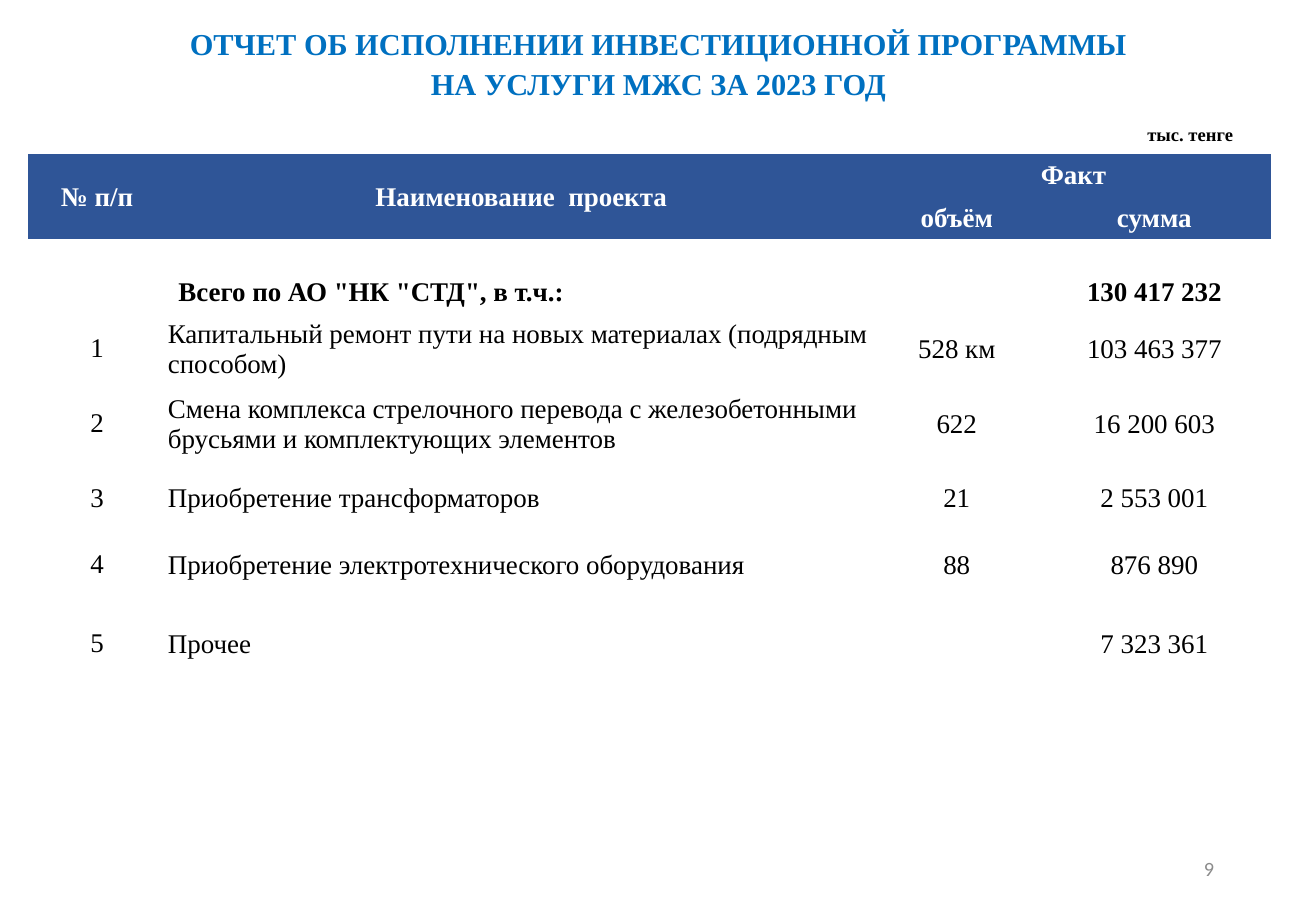
import dataclasses

import pptx
import pptx.dml.color
import pptx.enum.text
import pptx.oxml.ns
import pptx.util

Cm = pptx.util.Cm
Align = pptx.enum.text.PP_ALIGN
Anchor = pptx.enum.text.MSO_ANCHOR
AutoSize = pptx.enum.text.MSO_AUTO_SIZE


@dataclasses.dataclass(frozen=True)
class Theme:
    serif: str = "Times New Roman"
    sans: str = "Calibri"
    title_color: str = "0070C0"
    header_fill: str = "2F5597"
    white: str = "FFFFFF"
    black: str = "000000"
    gray: str = "8C8C8C"
    title_size: int = 18
    table_size: int = 16
    number_size: int = 12
    unit_size: int = 11
    plain_table: str = "{2D5ABB26-0587-4C30-8999-92F81FD0307C}"


def apply_format(target, values):
    for name, value in values.items():
        setattr(target, name, value)


def margins(left, top, right, bottom):
    return {
        "margin_left": Cm(left),
        "margin_top": Cm(top),
        "margin_right": Cm(right),
        "margin_bottom": Cm(bottom),
    }


class ReportSlide:
    def __init__(self, presentation, theme):
        self.theme = theme
        self.slide = presentation.slides.add_slide(presentation.slide_layouts[6])

    def add_line(self, paragraph, text, size, color, bold=False, font=None, **layout):
        apply_format(paragraph, layout)
        run = paragraph.add_run()
        run.text = text
        apply_format(run.font, {
            "name": font or self.theme.serif,
            "size": pptx.util.Pt(size),
            "bold": bold,
        })
        run.font.color.rgb = pptx.dml.color.RGBColor.from_string(color)

    def text(self, box, lines, auto_size=AutoSize.NONE, **style):
        frame = self.slide.shapes.add_textbox(*map(Cm, box)).text_frame
        apply_format(frame, {
            "word_wrap": True,
            "vertical_anchor": Anchor.MIDDLE,
            "auto_size": auto_size,
        })
        for index, line in enumerate(lines):
            paragraph = frame.add_paragraph() if index else frame.paragraphs[0]
            self.add_line(paragraph, line, **style)

    def table(self, left, top, widths, heights):
        table = self.slide.shapes.add_table(
            len(heights), len(widths), Cm(left), Cm(top),
            Cm(sum(widths)), Cm(sum(heights)),
        ).table
        apply_format(table, {"first_row": False, "horz_banding": False})
        style_id = table._tbl.tblPr.find(pptx.oxml.ns.qn("a:tableStyleId"))
        style_id.text = self.theme.plain_table
        for column, width in zip(table.columns, widths):
            column.width = Cm(width)
        for row, height in zip(table.rows, heights):
            row.height = Cm(height)
        return table

    def cell(self, cell, text, fill, color, inset, alignment, bold):
        cell.fill.solid()
        cell.fill.fore_color.rgb = pptx.dml.color.RGBColor.from_string(fill)
        apply_format(cell, {"vertical_anchor": Anchor.MIDDLE, **inset})
        if text:
            self.add_line(cell.text_frame.paragraphs[0], text, self.theme.table_size,
                          color, bold, alignment=alignment)


HEADER = [
    ["№ п/п", "Наименование  проекта", "Факт", ""],
    ["", "", "объём", "сумма"],
]
TOTAL = ["", 'Всего по АО "НК "СТД", в т.ч.:', "", "130 417 232"]
PROJECTS = [
    ["1", "Капитальный ремонт пути на новых материалах (подрядным способом)",
     "528 км", "103 463 377"],
    ["2", "Смена комплекса стрелочного перевода с железобетонными брусьями "
     "и комплектующих элементов", "622", "16 200 603"],
    ["3", "Приобретение трансформаторов", "21", "2 553 001"],
    ["4", "Приобретение электротехнического оборудования", "88", "876 890"],
    ["5", "Прочее", "", "7 323 361"],
]
COLUMN_WIDTHS = [2.9, 14.83, 3.38, 4.88]
ROW_HEIGHTS = [0.79, 0.86, 1.57, 1.42, 1.73, 1.37, 1.42, 1.88]


def add_report_table(report):
    theme = report.theme
    standard = margins(0.25, 0.13, 0.25, 0.13)
    none = margins(0, 0, 0, 0)
    thin = margins(0.03, 0.03, 0.03, 0)
    table = report.table(0.58, 3.23, COLUMN_WIDTHS, ROW_HEIGHTS)
    table.cell(0, 0).merge(table.cell(1, 0))
    table.cell(0, 1).merge(table.cell(1, 1))
    table.cell(0, 2).merge(table.cell(0, 3))

    for row, texts in enumerate(HEADER):
        for column, text in enumerate(texts):
            report.cell(table.cell(row, column), text, theme.header_fill, theme.white,
                        none if row else standard, Align.CENTER, True)

    total_row = len(HEADER)
    for row, texts in enumerate([TOTAL, *PROJECTS], total_row):
        is_total = row == total_row
        for column, text in enumerate(texts):
            is_name = column == 1
            if is_total:
                inset = margins(0.25 if is_name else 0, 0.63, 0, 0)
            else:
                inset = thin if column else standard
            report.cell(table.cell(row, column), text, theme.white, theme.black, inset,
                        Align.LEFT if is_name else Align.CENTER, is_total)


def main():
    presentation = pptx.Presentation()
    apply_format(presentation, {"slide_width": Cm(27.51), "slide_height": Cm(19.05)})
    theme = Theme()
    report = ReportSlide(presentation, theme)
    report.text((19.43, 17.65, 6.2, 1.02), ["9"], size=theme.number_size,
                color=theme.gray, font=theme.sans, alignment=Align.RIGHT)
    report.text((1.84, 0.38, 23.85, 1.8),
                ["ОТЧЕТ ОБ ИСПОЛНЕНИИ ИНВЕСТИЦИОННОЙ ПРОГРАММЫ",
                 "НА УСЛУГИ МЖС ЗА 2023 ГОД"],
                size=theme.title_size, color=theme.title_color, bold=True,
                alignment=Align.CENTER, line_spacing=1.1)
    add_report_table(report)
    report.text((22.83, 2.44, 3.2, 0.74), ["тыс. тенге"],
                auto_size=AutoSize.SHAPE_TO_FIT_TEXT, size=theme.unit_size,
                color=theme.black, bold=True, alignment=Align.RIGHT)
    presentation.save("out.pptx")


if __name__ == "__main__":
    main()
